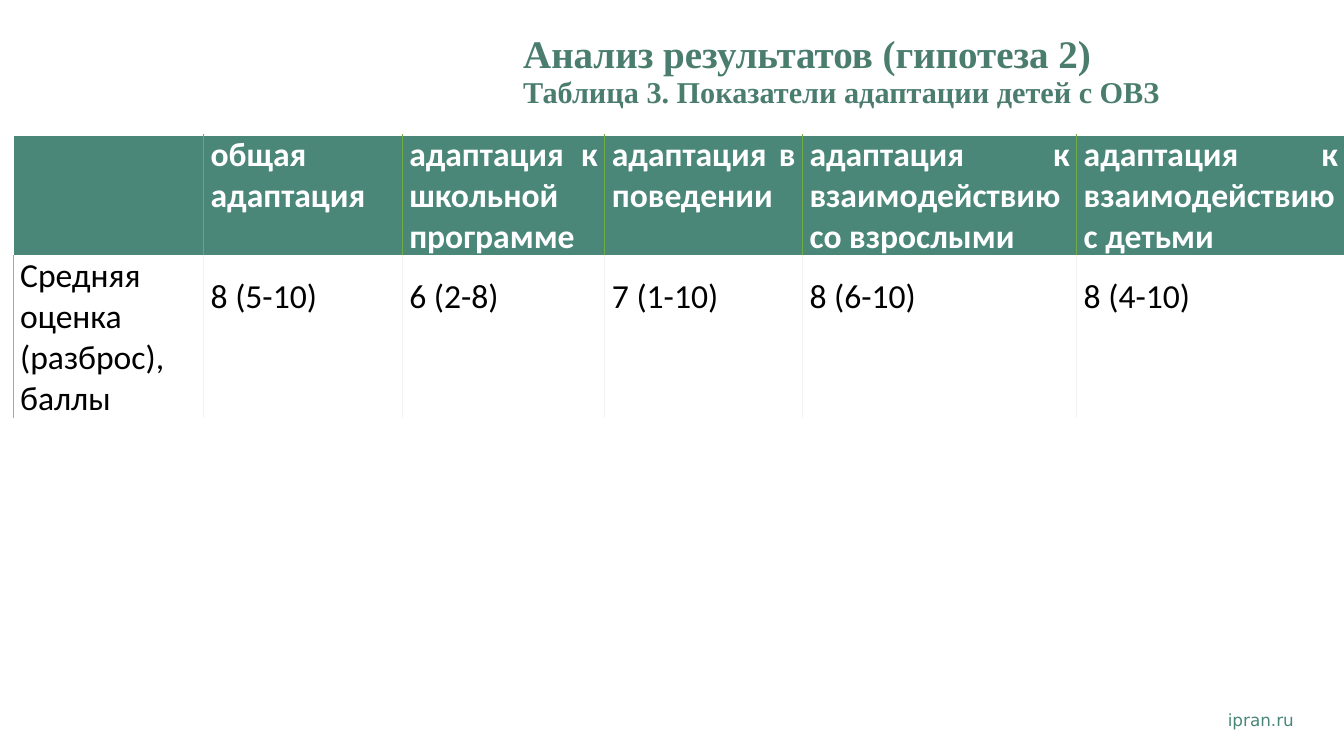
from lxml import etree
from pptx import Presentation
from pptx import util as u
from pptx.dml.color import RGBColor
from pptx.enum import text
from pptx.oxml.ns import qn

THEME = {
    "title": "4B7D6E", "site": "498779", "header": "4A8779",
    "white": "FFFFFF", "black": "000000",
    "green_line": "70AD47", "edge_line": "A6A6A6", "pale_line": "F2F2F2",
    "serif": "Times New Roman", "sans": "DejaVu Sans", "body": "Calibri",
    "title_size": 27.9, "subtitle_size": 21.6, "table_size": 24, "site_size": 12,
}


def style_font(font, face, size, color, bold=False):
    values = {"name": THEME[face], "size": u.Pt(THEME[size]), "bold": bold}
    for name, value in values.items():
        setattr(font, name, value)
    font.color.rgb = RGBColor.from_string(THEME[color])


def draw_border(cell, side, color):
    line = etree.SubElement(cell._tc.get_or_add_tcPr(), qn("a:ln" + side), w=str(u.Pt(1)))
    fill = etree.SubElement(line, qn("a:solidFill"))
    etree.SubElement(fill, qn("a:srgbClr"), val=THEME[color])


presentation = Presentation()
presentation.slide_width, presentation.slide_height = u.Inches(13.33), u.Inches(7.5)
slide = presentation.slides.add_slide(presentation.slide_layouts[6])

# Site address
site = slide.shapes.add_textbox(*map(u.Inches, (12.08, 6.99, 1.04, 0.3))).text_frame
site.word_wrap = True
site_run = site.paragraphs[0].add_run()
site_run.text = "ipran.ru"
style_font(site_run.font, "sans", "site_size", "site")

# Table of adaptation scores
header = ["", "общая адаптация", "адаптация к школьной программе", "адаптация в поведении",
          "адаптация к взаимодействию со взрослыми", "адаптация к взаимодействию с детьми"]
scores = ["Средняя оценка (разброс), баллы", "8 (5-10)", "6 (2-8)", "7 (1-10)",
          "8 (6-10)", "8 (4-10)"]
column_widths = [1.89, 1.97, 2.01, 1.96, 2.72, 2.66]
row_heights = [0.58, 0.51]
# Fill, text colour, bold, inner line, outer line
row_styles = [("header", "white", True, "green_line", "white"),
              ("white", "black", False, "pale_line", "edge_line")]
cell_format = {"margin_left": u.Inches(0.07), "margin_right": u.Inches(0.07),
               "margin_top": 0, "margin_bottom": 0}

table = slide.shapes.add_table(
    len(row_heights), len(column_widths), u.Inches(0.13), u.Inches(1.34),
    u.Inches(sum(column_widths)), u.Inches(sum(row_heights))).table
for column, width in zip(table.columns, column_widths):
    column.width = u.Inches(width)

last = len(column_widths) - 1
for row_index, labels in enumerate([header, scores]):
    table.rows[row_index].height = u.Inches(row_heights[row_index])
    fill, ink, bold, inner, outer = row_styles[row_index]
    for column_index, label in enumerate(labels):
        cell = table.cell(row_index, column_index)
        for name, value in cell_format.items():
            setattr(cell, name, value)
        draw_border(cell, "L", outer if column_index == 0 else inner)
        draw_border(cell, "R", outer if column_index == last else inner)
        draw_border(cell, "T", "white")
        draw_border(cell, "B", "white")
        cell.fill.solid()
        cell.fill.fore_color.rgb = RGBColor.from_string(THEME[fill])
        paragraph = cell.text_frame.paragraphs[0]
        paragraph.alignment = text.PP_ALIGN.JUSTIFY
        if row_index and column_index:
            paragraph.line_spacing = 1.5
        if label:
            run = paragraph.add_run()
            run.text = label
            style_font(run.font, "body", "table_size", ink, bold)

# Title and table caption
title = slide.shapes.add_textbox(*map(u.Inches, (5.09, 0.34, 7.35, 0.76))).text_frame
title.word_wrap = True
title.vertical_anchor = text.MSO_ANCHOR.MIDDLE
paragraph = title.paragraphs[0]
paragraph.line_spacing = 0.9
heading = paragraph.add_run()
heading.text = "Анализ результатов (гипотеза 2)"
style_font(heading.font, "serif", "title_size", "title", True)
paragraph.add_line_break()
caption = paragraph.add_run()
caption.text = "Таблица 3. Показатели адаптации детей с ОВЗ"
style_font(caption.font, "serif", "subtitle_size", "title", True)

presentation.save("out.pptx")
